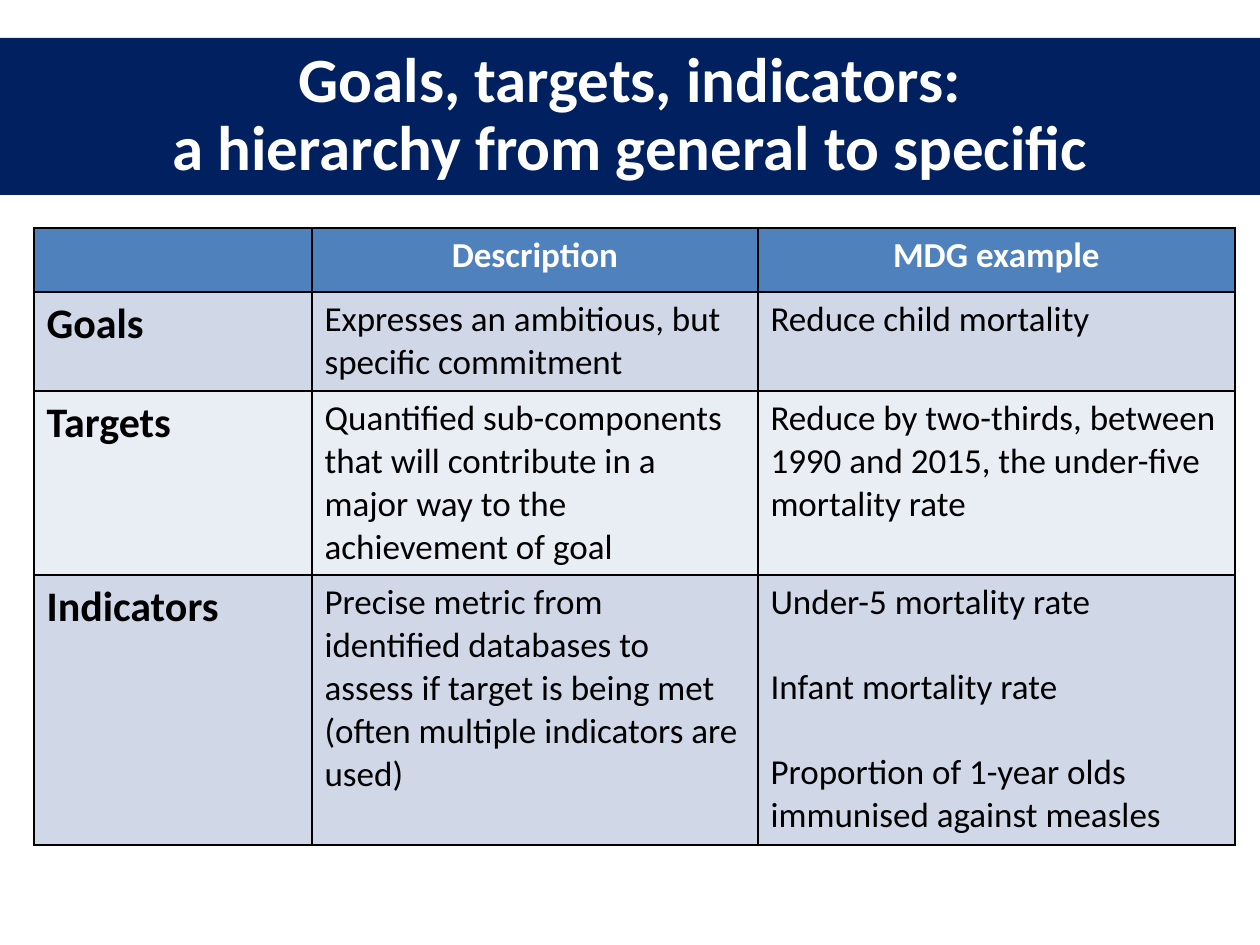
from lxml.etree import SubElement
from pptx import Presentation
from pptx.dml.color import RGBColor
from pptx.enum.text import MSO_ANCHOR, MSO_AUTO_SIZE, PP_ALIGN
from pptx.oxml.ns import qn
from pptx.util import Pt

TITLE = "Goals, targets, indicators:\va hierarchy from general to specific"
HEADER = ["", "Description", "MDG example"]
# label, description, example blocks (a gap separates blocks; each block lists its lines)
LEVELS = [
    ("Goals", "Expresses an ambitious, but specific commitment",
     [["Reduce child mortality"]]),
    ("Targets", "Quantified sub-components that will contribute in a major way "
     "to the achievement of goal",
     [["Reduce by two-thirds, between 1990 and 2015, the under-five mortality rate"]]),
    ("Indicators", "Precise metric from identified databases to assess if target "
     "is being met (often multiple indicators are used)",
     [["Under-5 mortality rate"], ["Infant mortality rate"],
      ["Proportion of 1-year olds", "immunised against measles"]]),
]

THEME = {
    "font": "Calibri",
    "title_fill": "002060", "header_fill": "4F81BD", "bands": ["D0D8E8", "E9EDF4"],
    "light": "FFFFFF", "dark": "000000", "border": "000000",
    "title_size": 36, "label_size": 24, "body_size": 20,
    "block_gap": 24, "border_width": 1,
}

PX_PER_INCH = 126
SLIDE = (1260, 945)
TITLE_BOX = (0, 38, 1260, 157)
TABLE_LEFT, TABLE_TOP = 34, 228
COL_WIDTHS = [278, 446, 477]
ROW_HEIGHTS = [64, 99, 184, 270]


def px(n):
    return round(n * 914400 / PX_PER_INCH)


def rgb(name):
    return RGBColor.from_string(THEME.get(name, name))


def style(p, size, color, bold=False, align=PP_ALIGN.LEFT):
    p.alignment = align
    for r in p.runs:
        r.font.name = THEME["font"]
        r.font.size = Pt(THEME[size])
        r.font.bold = bold
        r.font.color.rgb = rgb(color)


def paint_cell(cell, fill):
    """Draw the four borders, then the fill, in the order the schema asks for."""
    tc_pr = cell._tc.get_or_add_tcPr()
    for side in ("a:lnL", "a:lnR", "a:lnT", "a:lnB"):
        ln = SubElement(tc_pr, qn(side), w=str(Pt(THEME["border_width"])))
        SubElement(SubElement(ln, qn("a:solidFill")), qn("a:srgbClr"), val=THEME["border"])
    cell.fill.solid()
    cell.fill.fore_color.rgb = rgb(fill)


def add_title(slide):
    sp = slide.shapes.title
    sp.left, sp.top, sp.width, sp.height = map(px, TITLE_BOX)
    sp.fill.solid()
    sp.fill.fore_color.rgb = rgb("title_fill")
    tf = sp.text_frame
    tf.text = TITLE
    tf.auto_size = MSO_AUTO_SIZE.NONE
    tf.vertical_anchor = MSO_ANCHOR.MIDDLE
    p = tf.paragraphs[0]
    p.line_spacing = 0.9
    style(p, "title_size", "light", True, PP_ALIGN.CENTER)


def fill_example(tf, blocks):
    tf.text = "\n".join(line for block in blocks for line in block)
    paragraphs = iter(tf.paragraphs)
    for b, block in enumerate(blocks):
        for i, _ in enumerate(block):
            p = next(paragraphs)
            style(p, "body_size", "dark")
            if b and i == 0:
                p.space_before = Pt(THEME["block_gap"])


def add_hierarchy_table(slide):
    frame = slide.shapes.add_table(
        len(ROW_HEIGHTS), len(COL_WIDTHS), px(TABLE_LEFT), px(TABLE_TOP),
        px(sum(COL_WIDTHS)), px(sum(ROW_HEIGHTS)))
    table = frame.table
    for col, width in zip(table.columns, COL_WIDTHS):
        col.width = px(width)
    for row, height in zip(table.rows, ROW_HEIGHTS):
        row.height = px(height)

    for cell, text in zip(table.rows[0].cells, HEADER):
        paint_cell(cell, "header_fill")
        if text:
            cell.text_frame.text = text
            style(cell.text_frame.paragraphs[0], "body_size", "light", True, PP_ALIGN.CENTER)

    for n, (label, description, example) in enumerate(LEVELS):
        cells = list(table.rows[n + 1].cells)
        for cell in cells:
            paint_cell(cell, THEME["bands"][n % 2])
        label_tf, description_tf, example_tf = [cell.text_frame for cell in cells]
        label_tf.text = label
        style(label_tf.paragraphs[0], "label_size", "dark", True)
        description_tf.text = description
        style(description_tf.paragraphs[0], "body_size", "dark")
        fill_example(example_tf, example)


def main():
    prs = Presentation()
    prs.slide_width, prs.slide_height = map(px, SLIDE)
    slide = prs.slides.add_slide(prs.slide_layouts[5])
    add_title(slide)
    add_hierarchy_table(slide)
    prs.save("out.pptx")


if __name__ == "__main__":
    main()
